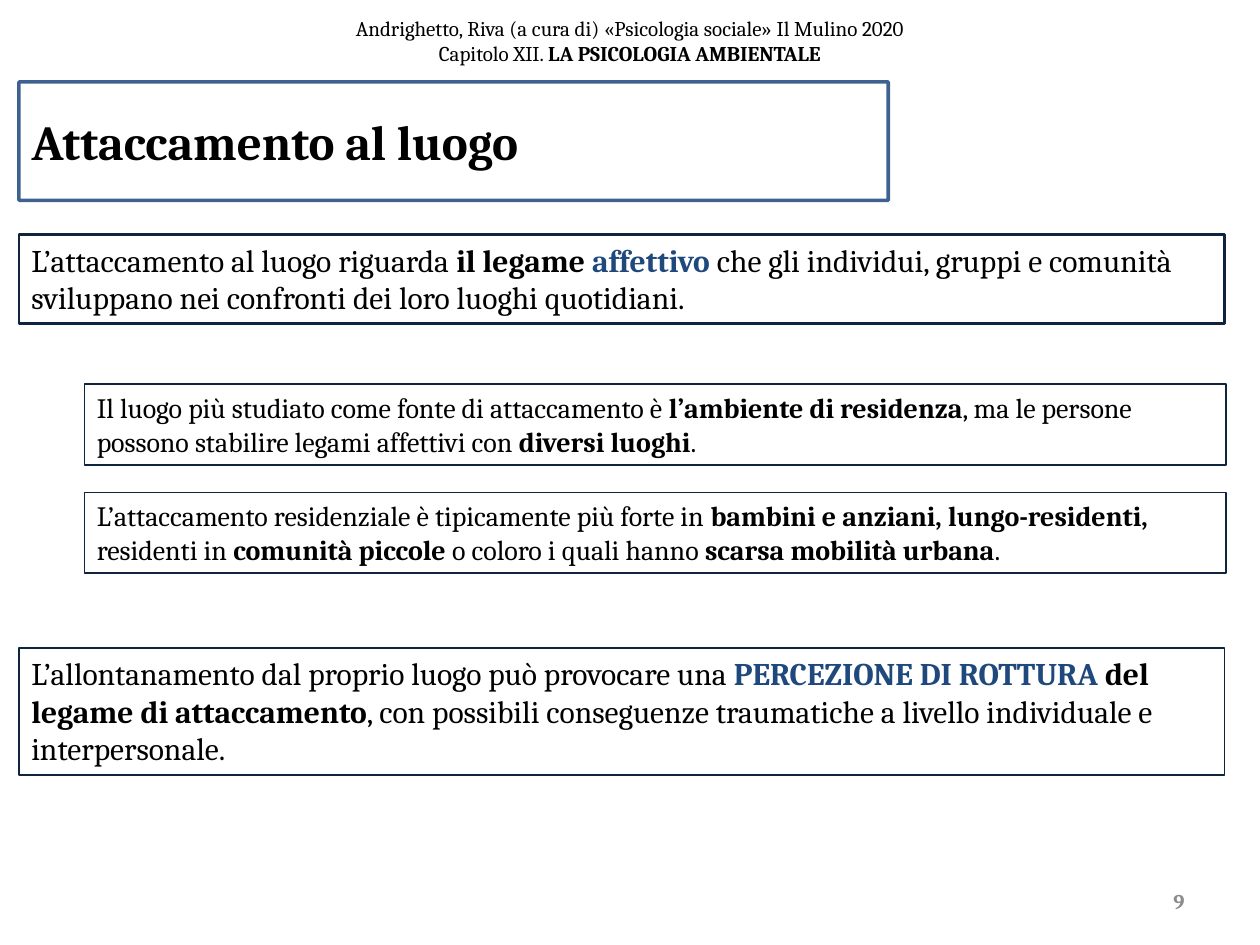
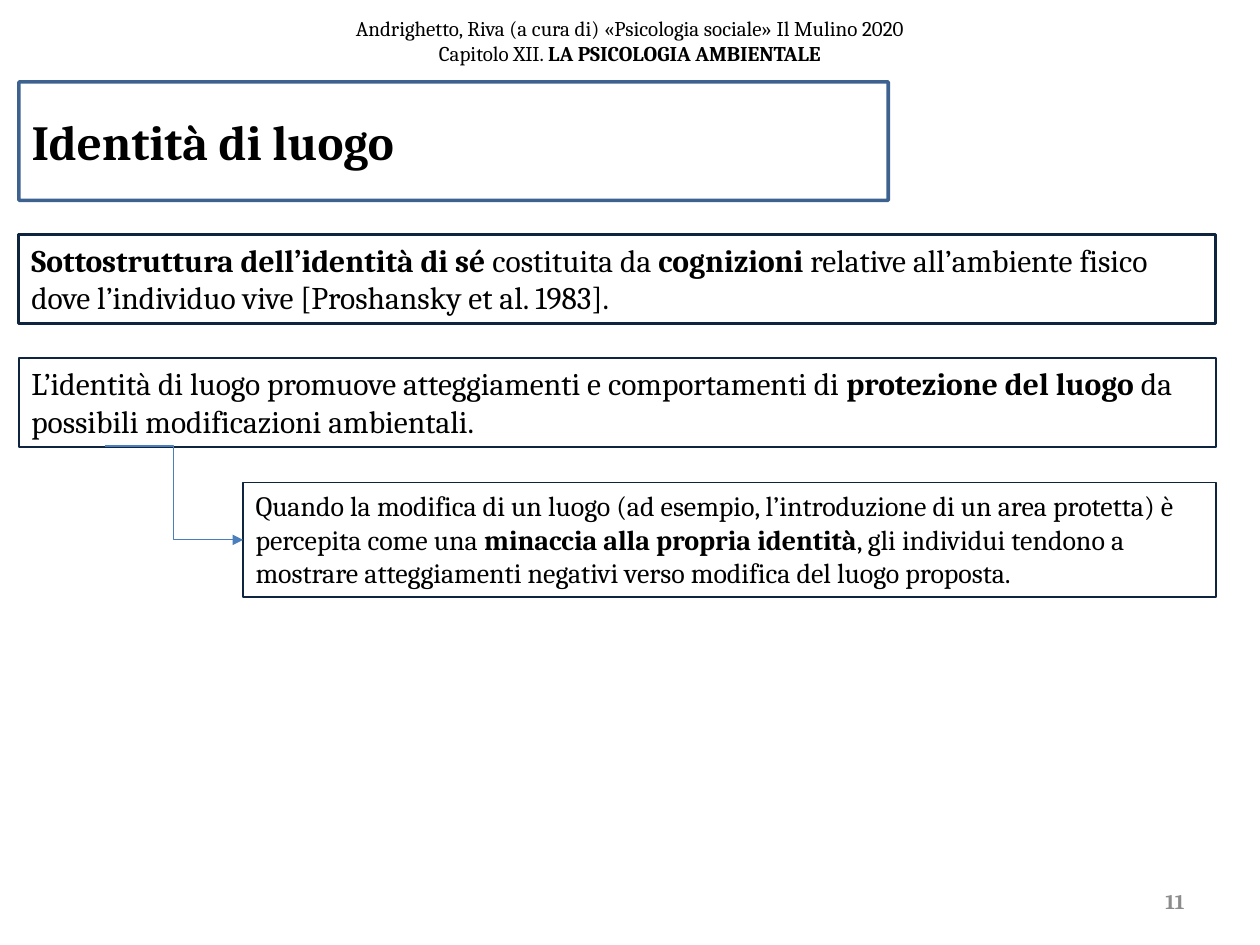
from pptx import Presentation
from pptx.dml.color import RGBColor
from pptx.enum.shapes import MSO_CONNECTOR, MSO_SHAPE
from pptx.enum.text import MSO_ANCHOR, MSO_AUTO_SIZE, PP_ALIGN
from pptx.oxml.xmlchemy import OxmlElement
from pptx.util import Inches, Pt

RECTANGLE = MSO_SHAPE.RECTANGLE
ELBOW = MSO_CONNECTOR.ELBOW
TOP, MIDDLE = MSO_ANCHOR.TOP, MSO_ANCHOR.MIDDLE
LEFT, CENTER, RIGHT = PP_ALIGN.LEFT, PP_ALIGN.CENTER, PP_ALIGN.RIGHT
NO_AUTOFIT, GROW = MSO_AUTO_SIZE.NONE, MSO_AUTO_SIZE.SHAPE_TO_FIT_TEXT

FONT = "Cambria"
COLORS = {
    "text": "000000",
    "accent": "1F497D",
    "border": "0F243E",
    "background": "FFFFFF",
    "number": "8C8C8C",
    "arrow": "4B7EBC",
}
PLAIN, BOLD = (False, "text"), (True, "text")
ACCENT, NUMBER = (True, "accent"), (True, "number")
MARGIN = 0.15
TITLE_LAYOUT = 5
HEADER = [
    [("Andrighetto, Riva (a cura di) «Psicologia sociale» Il Mulino 2020", PLAIN)],
    [("Capitolo XII. ", PLAIN), ("LA PSICOLOGIA AMBIENTALE", BOLD)],
]


def color(name):
    return RGBColor.from_string(COLORS[name])


def write_paragraph(paragraph, pieces, size, alignment=LEFT):
    paragraph.alignment = alignment
    for text, (bold, color_name) in pieces:
        run = paragraph.add_run()
        run.text = text
        run.font.name = FONT
        run.font.size = Pt(size)
        run.font.bold = bold
        run.font.color.rgb = color(color_name)


def add_label(slide, bounds, lines, alignment):
    label = slide.shapes.add_textbox(*map(Inches, bounds))
    frame = label.text_frame
    frame.word_wrap = True
    frame.vertical_anchor = MIDDLE
    for index, pieces in enumerate(lines):
        paragraph = frame.add_paragraph() if index else frame.paragraphs[0]
        write_paragraph(paragraph, pieces, 12, alignment)


def set_title(slide, text):
    title = slide.shapes.title
    title.left, title.top = Inches(MARGIN), Inches(0.65)
    title.width, title.height = Inches(6.9), Inches(0.94)
    title.line.color.rgb = color("accent")
    title.line.width = Pt(2)
    alpha = OxmlElement("a:alpha")
    alpha.set("val", "86000")
    title.line.fill._xPr.find(".//" + title_color_tag(title)).append(alpha)
    frame = title.text_frame
    frame.auto_size = NO_AUTOFIT
    frame.vertical_anchor = MIDDLE
    write_paragraph(frame.paragraphs[0], [(text, BOLD)], 28)


def title_color_tag(title):
    return "{%s}srgbClr" % title._element.nsmap["a"]


def add_box(slide, bounds, pieces, size=18, border=1, filled=False):
    box = slide.shapes.add_shape(RECTANGLE, *map(Inches, bounds))
    box.shadow.inherit = False
    if filled:
        box.fill.solid()
        box.fill.fore_color.rgb = color("background")
    else:
        box.fill.background()
    box.line.color.rgb = color("border")
    box.line.width = Pt(border)
    frame = box.text_frame
    frame.word_wrap = True
    frame.auto_size = GROW
    frame.vertical_anchor = TOP
    write_paragraph(frame.paragraphs[0], pieces, size)
    return box


def add_elbow_arrow(slide, start, target):
    x, y = map(Inches, start)
    arrow = slide.shapes.add_connector(ELBOW, x, y, target.left, target.top)
    arrow.end_connect(target, 1)
    arrow.line.color.rgb = color("arrow")
    arrow.line.width = Pt(0.75)
    tail = OxmlElement("a:tailEnd")
    tail.set("type", "triangle")
    arrow.line._get_or_add_ln().append(tail)
    arrow._element.spPr.append(OxmlElement("a:effectLst"))


def add_base_slide(deck, title, number):
    slide = deck.slides.add_slide(deck.slide_layouts[TITLE_LAYOUT])
    add_label(slide, (0, -0.11, 10, 0.87), HEADER, CENTER)
    add_label(slide, (7.17, 6.95, 2.33, 0.4), [[(number, NUMBER)]], RIGHT)
    set_title(slide, title)
    return slide


def build_attachment(deck):
    slide = add_base_slide(deck, "Attaccamento al luogo", "9")
    add_box(slide, (MARGIN, 1.86, 9.57, 0.71), [
        ("L’attaccamento al luogo riguarda ", PLAIN),
        ("il legame ", BOLD),
        ("affettivo ", ACCENT),
        ("che gli individui, gruppi e comunità sviluppano nei confronti "
         "dei loro luoghi quotidiani.", PLAIN),
    ], border=1.5, filled=True)
    findings = [
        [
            ("Il luogo più studiato come fonte di attaccamento è ", PLAIN),
            ("l’ambiente di residenza", BOLD),
            (", ma le persone possono stabilire legami affettivi con ", PLAIN),
            ("diversi luoghi", BOLD),
            (".", PLAIN),
        ],
        [
            ("L’attaccamento residenziale è tipicamente più forte in ", PLAIN),
            ("bambini e anziani, lungo-residenti, ", BOLD),
            ("residenti in ", PLAIN),
            ("comunità piccole ", BOLD),
            ("o coloro i quali hanno ", PLAIN),
            ("scarsa mobilità urbana", BOLD),
            (".", PLAIN),
        ],
    ]
    for row, pieces in enumerate(findings):
        add_box(slide, (0.67, 3.05 + 0.86 * row, 9.06, 0.64), pieces, size=16)
    add_box(slide, (MARGIN, 5.14, 9.57, 1.01), [
        ("L’allontanamento dal proprio luogo può provocare una ", PLAIN),
        ("PERCEZIONE DI ROTTURA ", ACCENT),
        ("del legame di attaccamento", BOLD),
        (", con possibili conseguenze traumatiche a livello individuale "
         "e interpersonale.", PLAIN),
    ])


def build_identity(deck):
    slide = add_base_slide(deck, "Identità di luogo", "11")
    add_box(slide, (MARGIN, 1.86, 9.5, 0.71), [
        ("Sottostruttura dell’identità di sé ", BOLD),
        ("costituita da ", PLAIN),
        ("cognizioni", BOLD),
        (" relative all’ambiente fisico dove l’individuo vive "
         "[Proshansky et al. 1983].", PLAIN),
    ], border=1.75, filled=True)
    add_box(slide, (MARGIN, 2.84, 9.5, 0.71), [
        ("L’identità di luogo promuove atteggiamenti e comportamenti di ", PLAIN),
        ("protezione del luogo ", BOLD),
        ("da possibili modificazioni ambientali.", PLAIN),
    ])
    threat = add_box(slide, (1.93, 3.83, 7.72, 0.91), [
        ("Quando la modifica di un luogo (ad esempio, l’introduzione di un area "
         "protetta) è percepita come una ", PLAIN),
        ("minaccia alla propria identità", BOLD),
        (", gli individui tendono a mostrare atteggiamenti negativi verso "
         "modifica del luogo proposta.", PLAIN),
    ], size=16)
    add_elbow_arrow(slide, (0.83, 3.54), threat)


def main():
    deck = Presentation()
    deck.slide_width, deck.slide_height = Inches(10), Inches(7.5)
    build_attachment(deck)
    build_identity(deck)
    deck.save("out.pptx")


if __name__ == "__main__":
    main()
